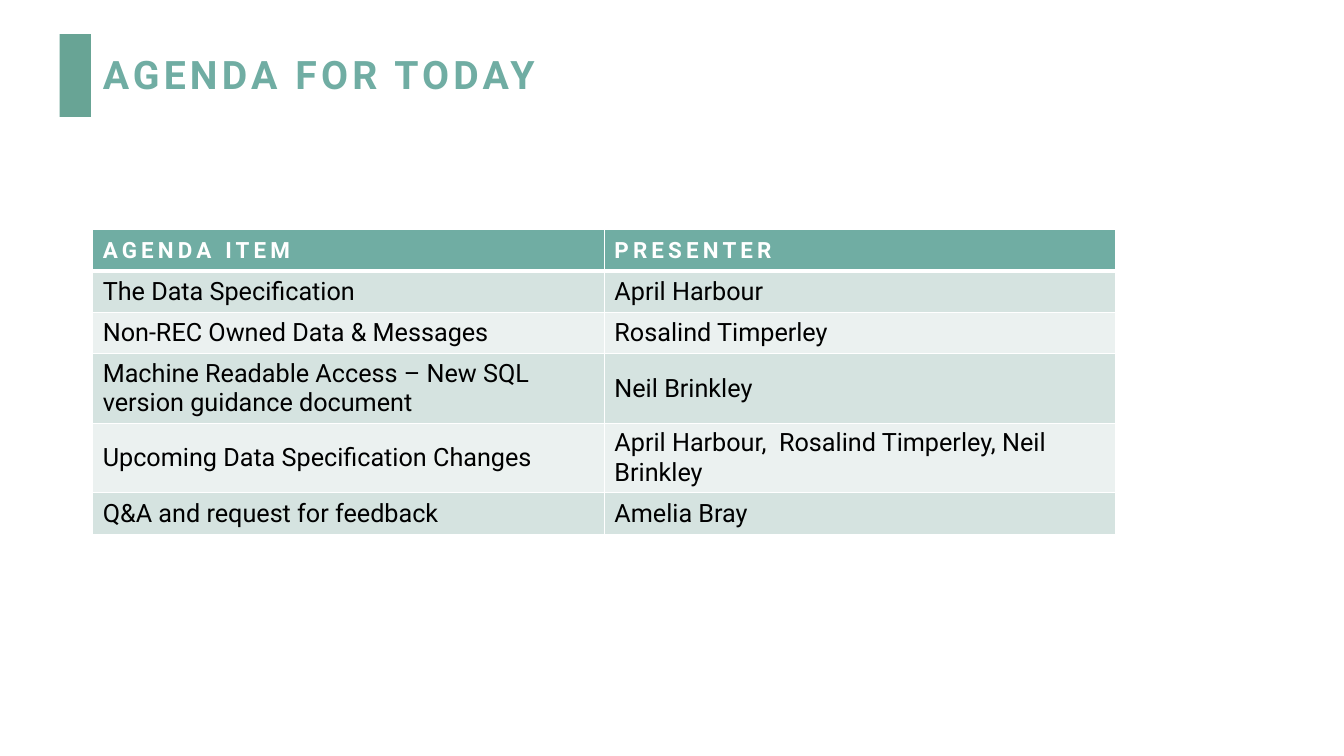
from dataclasses import dataclass
from lxml import etree
from pptx import Presentation
from pptx.dml.color import RGBColor
from pptx.enum.shapes import MSO_SHAPE
from pptx.enum.text import MSO_ANCHOR, MSO_AUTO_SIZE, PP_ALIGN
from pptx.oxml.ns import qn
from pptx.util import Inches, Pt

RECT = MSO_SHAPE.RECTANGLE
MIDDLE = MSO_ANCHOR.MIDDLE
LEFT = PP_ALIGN.LEFT
FIXED = MSO_AUTO_SIZE.NONE
WIDE, HIGH = Inches(13.33), Inches(7.5)
ROW, TALL = Inches(0.41), Inches(0.69)


@dataclass(frozen=True)
class Theme:
    font: str = "Roboto"
    bar: str = "68A495"
    main: str = "70ADA3"
    odd: str = "D5E3E0"
    even: str = "EBF1F0"
    ink: str = "000000"
    white: str = "FFFFFF"
    title: int = 28
    head: int = 16
    body: int = 18


THEME = Theme()
AGENDA = [
    ("AGENDA ITEM", "PRESENTER"),
    ("The Data Specification", "April Harbour"),
    ("Non-REC Owned Data & Messages", "Rosalind Timperley"),
    ("Machine Readable Access – New SQL version guidance document", "Neil Brinkley"),
    ("Upcoming Data Specification Changes",
     "April Harbour,  Rosalind Timperley, Neil Brinkley"),
    ("Q&A and request for feedback", "Amelia Bray"),
]
TALL_ROWS = (3, 4)


def share(x, y, w, h):
    return [int(size * part / 100)
            for size, part in ((WIDE, x), (HIGH, y), (WIDE, w), (HIGH, h))]


def write(frame, text, *, size, color, bold=False, gap=0, line=None):
    para = frame.paragraphs[0]
    para.alignment = LEFT
    if line:
        para.line_spacing = line
    run = para.add_run()
    run.text = text
    font = run.font
    font.name = THEME.font
    font.size = Pt(size)
    font.bold = bold
    font.color.rgb = RGBColor.from_string(color)
    font._element.set("spc", str(gap * 100))


def add_bar(slide):
    bar = slide.shapes.add_shape(RECT, *share(4.43, 4.53, 2.33, 10.93))
    bar.shadow.inherit = False
    bar.fill.solid()
    bar.fill.fore_color.rgb = RGBColor.from_string(THEME.bar)
    bar.line.fill.background()


def add_title(slide, text):
    title = slide.shapes.title
    title.left, title.top, title.width, title.height = share(6.9, 5.33, 76.14, 9.6)
    frame = title.text_frame
    frame.auto_size = FIXED
    frame.word_wrap = True
    frame.vertical_anchor = MIDDLE
    write(frame, text, size=THEME.title, color=THEME.main, bold=True, gap=3, line=0.9)


def edge(cell, top, bottom):
    props = cell._tc.get_or_add_tcPr()
    for side, width in (("L", 1), ("R", 1), ("T", top), ("B", bottom)):
        line = etree.SubElement(props, qn(f"a:ln{side}"), w=str(Pt(width)))
        fill = etree.SubElement(line, qn("a:solidFill"))
        etree.SubElement(fill, qn("a:srgbClr"), val=THEME.white)


def add_cell(cell, text, row):
    head = row == 0
    edge(cell, 3 if row == 1 else 1, 3 if head else 1)
    cell.fill.solid()
    shade = THEME.main if head else THEME.odd if row % 2 else THEME.even
    cell.fill.fore_color.rgb = RGBColor.from_string(shade)
    cell.vertical_anchor = MIDDLE
    style = (dict(size=THEME.head, color=THEME.white, bold=True, gap=3) if head
             else dict(size=THEME.body, color=THEME.ink))
    write(cell.text_frame, text, **style)


def add_agenda(slide, rows):
    box = share(6.9, 30.4, 76.14, 40.27)
    table = slide.shapes.add_table(len(rows), len(rows[0]), *box).table
    for r, texts in enumerate(rows):
        table.rows[r].height = TALL if r in TALL_ROWS else ROW
        for c, text in enumerate(texts):
            add_cell(table.cell(r, c), text, r)


def main():
    deck = Presentation()
    deck.slide_width, deck.slide_height = WIDE, HIGH
    slide = deck.slides.add_slide(deck.slide_layouts[5])
    add_bar(slide)
    add_title(slide, "AGENDA FOR TODAY")
    add_agenda(slide, AGENDA)
    deck.save("out.pptx")


if __name__ == "__main__":
    main()
